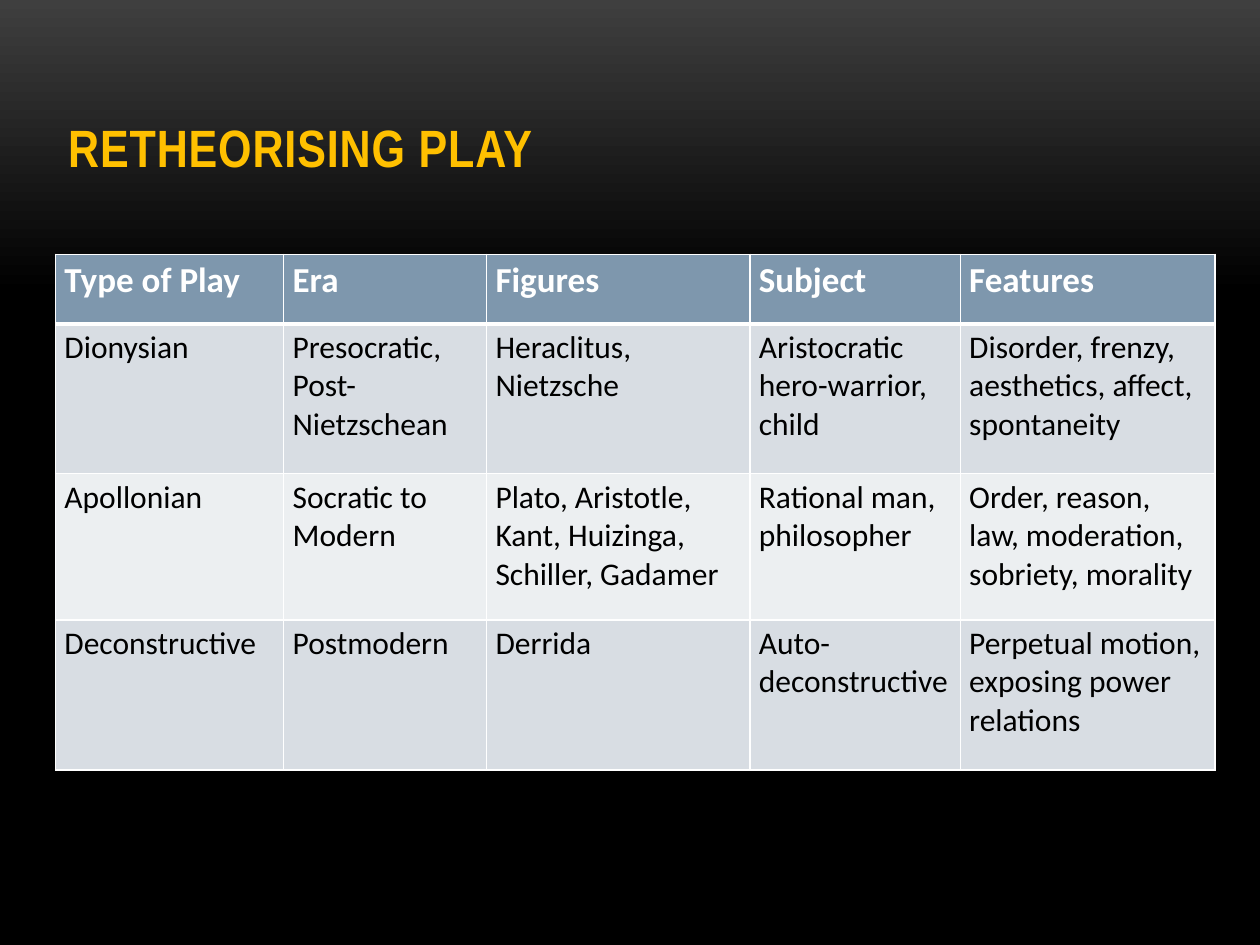
import copy
from dataclasses import dataclass

import pptx
import pptx.dml.color
import pptx.enum.text
import pptx.oxml
import pptx.oxml.ns
import pptx.util

Cm = pptx.util.Cm
GOLD, WHITE, BLACK = "FFC000", "FFFFFF", "000000"
HEADER_FILL, BAND_FILLS = "7E97AD", ("D8DDE3", "ECEFF1")
THIN, THICK = 1, 3


@dataclass
class PlayColumn:
    heading: str
    width: float
    entries: tuple[str, ...]


PLAY_COLUMNS = [
    PlayColumn("Type of Play", 4.6, ("Dionysian", "Apollonian", "Deconstructive")),
    PlayColumn("Era", 4.09, ("Presocratic,\nPost-Nietzschean", "Socratic to Modern", "Postmodern")),
    PlayColumn("Figures", 5.31, (
        "Heraclitus,\nNietzsche",
        "Plato, Aristotle, Kant, Huizinga, Schiller, Gadamer",
        "Derrida",
    )),
    PlayColumn("Subject", 4.24, (
        "Aristocratic hero-warrior, child",
        "Rational man, philosopher",
        "Auto-deconstructive",
    )),
    PlayColumn("Features", 5.13, (
        "Disorder, frenzy, aesthetics, affect, spontaneity",
        "Order, reason, law, moderation, sobriety, morality",
        "Perpetual motion, exposing power relations",
    )),
]
ROW_HEIGHTS = (1.4, 3.02, 2.95, 3.02)


def rgb(color: str) -> pptx.dml.color.RGBColor:
    return pptx.dml.color.RGBColor.from_string(color)


def write(frame, text: str, *, size: float, color: str, font: str = "Calibri",
          bold: bool = False, spacing: float = 0) -> None:
    frame.text = text
    for paragraph in frame.paragraphs:
        paragraph.alignment = pptx.enum.text.PP_ALIGN.LEFT
        for run in paragraph.runs:
            run.font.name = font
            run.font.size = pptx.util.Pt(size)
            run.font.bold = bold
            run.font.color.rgb = rgb(color)
            if spacing:
                run.font._element.set("spc", str(round(spacing * 100)))


def paint_background(slide) -> None:
    fill = slide.background.fill
    fill.gradient()
    fill.gradient_angle = 270
    last_stop = fill.gradient_stops[1]._gs
    last_stop.addnext(copy.deepcopy(last_stop))
    shades = (("3F3F3F", 0), (BLACK, 0.31), (BLACK, 1))
    for stop, (color, position) in zip(fill.gradient_stops, shades):
        stop.color.rgb = rgb(color)
        stop.position = position


def add_borders(cell, top: float, bottom: float) -> None:
    properties = cell._tc.get_or_add_tcPr()
    namespace = pptx.oxml.ns.nsdecls("a")
    for side, points in (("L", THIN), ("R", THIN), ("T", top), ("B", bottom)):
        properties.append(pptx.oxml.parse_xml(
            f'<a:ln{side} {namespace} w="{pptx.util.Pt(points)}"><a:solidFill>'
            f'<a:srgbClr val="{WHITE}"/></a:solidFill></a:ln{side}>'
        ))


def format_cell(cell, text: str, row: int) -> None:
    is_header = row == 0
    cell.margin_left = cell.margin_right = Cm(0.18)
    cell.margin_top = cell.margin_bottom = Cm(0.09)
    add_borders(cell, THICK if row == 1 else THIN, THICK if is_header else THIN)
    cell.fill.solid()
    cell.fill.fore_color.rgb = rgb(HEADER_FILL if is_header else BAND_FILLS[(row - 1) % 2])
    write(cell.text_frame, text, size=20 if is_header else 18,
          color=WHITE if is_header else BLACK, bold=is_header)


def add_title(slide, text: str) -> None:
    title = slide.shapes.title
    title.left, title.top, title.width, title.height = Cm(1.12), Cm(1.32), Cm(19.84), Cm(2.39)
    frame = title.text_frame
    frame.auto_size = pptx.enum.text.MSO_AUTO_SIZE.NONE
    frame.vertical_anchor = pptx.enum.text.MSO_ANCHOR.BOTTOM
    write(frame, text, size=30, color=GOLD, font="Arial Narrow", bold=True, spacing=0.5)


def add_play_table(slide, columns: list[PlayColumn]) -> None:
    table = slide.shapes.add_table(
        len(ROW_HEIGHTS), len(columns), Cm(1.12), Cm(5.13),
        Cm(sum(column.width for column in columns)), Cm(sum(ROW_HEIGHTS)),
    ).table
    for row, height in enumerate(ROW_HEIGHTS):
        table.rows[row].height = Cm(height)
    for index, column in enumerate(columns):
        table.columns[index].width = Cm(column.width)
        for row, text in enumerate((column.heading, *column.entries)):
            format_cell(table.cell(row, index), text, row)


def main() -> None:
    presentation = pptx.Presentation()
    presentation.slide_width, presentation.slide_height = Cm(25.4), Cm(19.05)
    slide = presentation.slides.add_slide(presentation.slide_layouts[5])
    paint_background(slide)
    add_title(slide, "RETHEORISING PLAY")
    add_play_table(slide, PLAY_COLUMNS)
    presentation.save("out.pptx")


if __name__ == "__main__":
    main()
